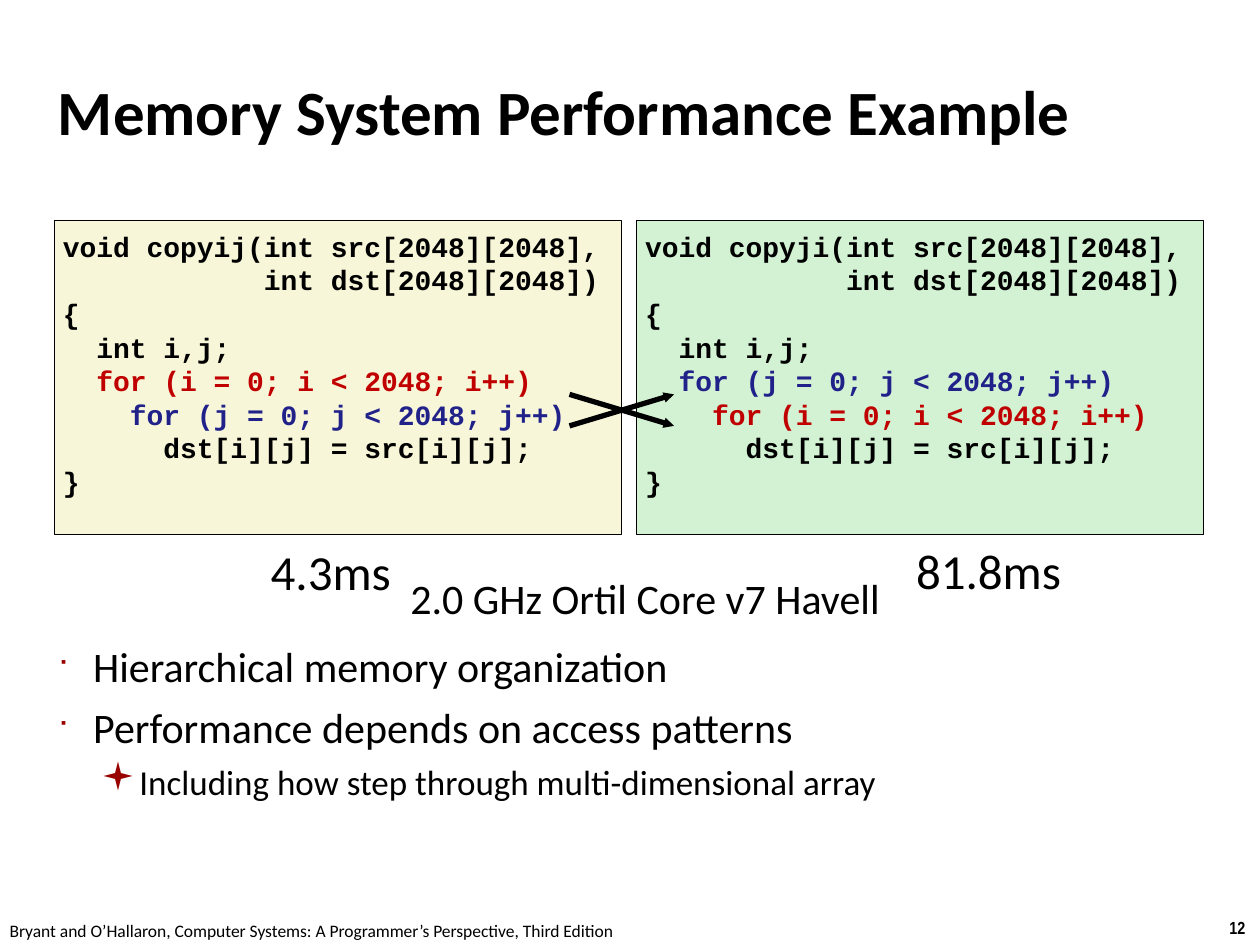
from dataclasses import dataclass

from lxml import etree
from pptx import Presentation
from pptx.dml.color import RGBColor
from pptx.enum import shapes, text
from pptx.oxml import ns
from pptx.util import Inches, Pt


@dataclass(frozen=True)
class Theme:
    ink: str = "000000"
    row_loop: str = "C00000"
    column_loop: str = "21218A"
    bullet: str = "990000"
    fast_fill: str = "F8F6D9"
    slow_fill: str = "D3F2D3"
    sans: str = "Calibri"
    narrow: str = "Arial Narrow"
    mono: str = "Courier New"
    symbols: str = "Wingdings"
    title: int = 36
    timing: int = 28
    body: int = 24
    detail: int = 20
    code: int = 16
    footer: int = 10


theme = Theme()


def style(para, size, name=theme.sans, color=theme.ink, bold=False):
    para.font.size, para.font.name, para.font.bold = Pt(size), name, bold
    para.font.color.rgb = RGBColor.from_string(color)


def add_box(page, left, top, width, height, inset=0.04):
    """Add an empty text box and return its text frame."""
    box = page.shapes.add_textbox(Inches(left), Inches(top), Inches(width), Inches(height))
    frame = box.text_frame
    frame.margin_left = frame.margin_right = Inches(inset)
    frame.margin_top = frame.margin_bottom = Inches(min(inset, 0.05))
    frame.word_wrap = True
    return frame


deck = Presentation()
deck.slide_width, deck.slide_height = Inches(10), Inches(7.5)
page = deck.slides.add_slide(deck.slide_layouts[6])

# Title
frame = add_box(page, 0.42, 0.28, 9.17, 1.19)
frame.vertical_anchor = text.MSO_ANCHOR.MIDDLE
frame.text = "Memory System Performance Example"
style(frame.paragraphs[0], theme.title, bold=True)

# Bulleted points: text, level, size, left indent, hanging, space before, mark, mark size
points = [
    ("Hierarchical memory organization", 0, theme.body, 0.28, 0.28, 6, "■", 60),
    ("Performance depends on access patterns", 0, theme.body, 0.28, 0.28, 6, "■", 60),
    ("Including how step through multi-dimensional array", 1, theme.detail, 0.6, 0.26, 5, "▪", 110),
]
frame = add_box(page, 0.42, 5.04, 9.17, 2.43)
for index, (words, level, size, indent, hanging, before, mark, percent) in enumerate(points):
    para = frame.add_paragraph() if index else frame.paragraphs[0]
    para.text, para.level = words, level
    props = para._p.get_or_add_pPr()
    props.set("marL", str(Inches(indent)))
    props.set("indent", str(-Inches(hanging)))
    color = etree.SubElement(props, ns.qn("a:buClr"))
    etree.SubElement(color, ns.qn("a:srgbClr"), val=theme.bullet)
    etree.SubElement(props, ns.qn("a:buSzPct"), val=str(percent * 1000))
    etree.SubElement(props, ns.qn("a:buFont"), typeface=theme.symbols)
    etree.SubElement(props, ns.qn("a:buChar"), char=mark)
    para.space_before = Pt(before)
    style(para, size)

# The two functions differ only in the order of their loops
row_loop = ("for (i = 0; i < 2048; i++)", theme.row_loop)
column_loop = ("for (j = 0; j < 2048; j++)", theme.column_loop)
functions = [
    ("copyij", 0.43, theme.fast_fill, row_loop, column_loop),
    ("copyji", 5.05, theme.slow_fill, column_loop, row_loop),
]
for name, left, fill, (outer, outer_color), (inner, inner_color) in functions:
    panel = page.shapes.add_shape(
        shapes.MSO_SHAPE.RECTANGLE, Inches(left), Inches(1.75), Inches(4.5), Inches(2.49))
    panel.shadow.inherit = False
    panel.fill.solid()
    panel.fill.fore_color.rgb = RGBColor.from_string(fill)
    panel.line.color.rgb = RGBColor.from_string(theme.ink)
    panel.line.width = Pt(0.5)
    frame = panel.text_frame
    frame.margin_left = frame.margin_right = Inches(0.07)
    frame.margin_top = frame.margin_bottom = Inches(0.07)
    frame.vertical_anchor = text.MSO_ANCHOR.TOP
    lines = [
        (f"void {name}(int src[2048][2048],", theme.ink),
        ("            int dst[2048][2048])", theme.ink),
        ("{", theme.ink),
        ("  int i,j;", theme.ink),
        ("  " + outer, outer_color),
        ("    " + inner, inner_color),
        ("      dst[i][j] = src[i][j];", theme.ink),
        ("}", theme.ink),
    ]
    for index, (code, color) in enumerate(lines):
        para = frame.add_paragraph() if index else frame.paragraphs[0]
        para.text = code
        para.alignment = text.PP_ALIGN.LEFT
        style(para, theme.code, theme.mono, color, bold=True)

# Crossing arrows show the swapped loops
for start, end in [(3.13, 3.38), (3.38, 3.13)]:
    arrow = page.shapes.add_connector(
        shapes.MSO_CONNECTOR.STRAIGHT, Inches(4.52), Inches(start), Inches(5.35), Inches(end))
    arrow.line.color.rgb = RGBColor.from_string(theme.ink)
    arrow.line.width = Pt(3)
    etree.SubElement(arrow.line._get_or_add_ln(), ns.qn("a:tailEnd"),
                     type="triangle", w="sm", len="sm")
    etree.SubElement(arrow._element.spPr, ns.qn("a:effectLst"))

# Centred one-line labels: timings, processor, footer and page number
citation = "Bryant and O’Hallaron, Computer Systems: A Programmer’s Perspective, Third Edition"
labels = [
    ("81.8ms", (7.22, 4.25, 1.25, 0.56), 0.04, theme.timing, theme.sans, False),
    ("4.3ms", (2.04, 4.25, 1.17, 0.57), 0.1, theme.timing, theme.sans, False),
    ("2.0 GHz Ortil Core v7 Havell", (3.11, 4.5, 4.02, 0.49), 0.04, theme.body, theme.sans, False),
    (citation, (0, 7.25, 4.94, 0.25), 0.05, theme.footer, theme.sans, False),
    ("12", (9.65, 7.23, 0.34, 0.27), 0.05, theme.footer, theme.narrow, True),
]
for words, place, inset, size, font, bold in labels:
    frame = add_box(page, *place, inset=inset)
    frame.word_wrap = False
    frame.text = words
    para = frame.paragraphs[0]
    para.alignment = text.PP_ALIGN.CENTER
    style(para, size, font, bold=bold)

deck.save("out.pptx")
